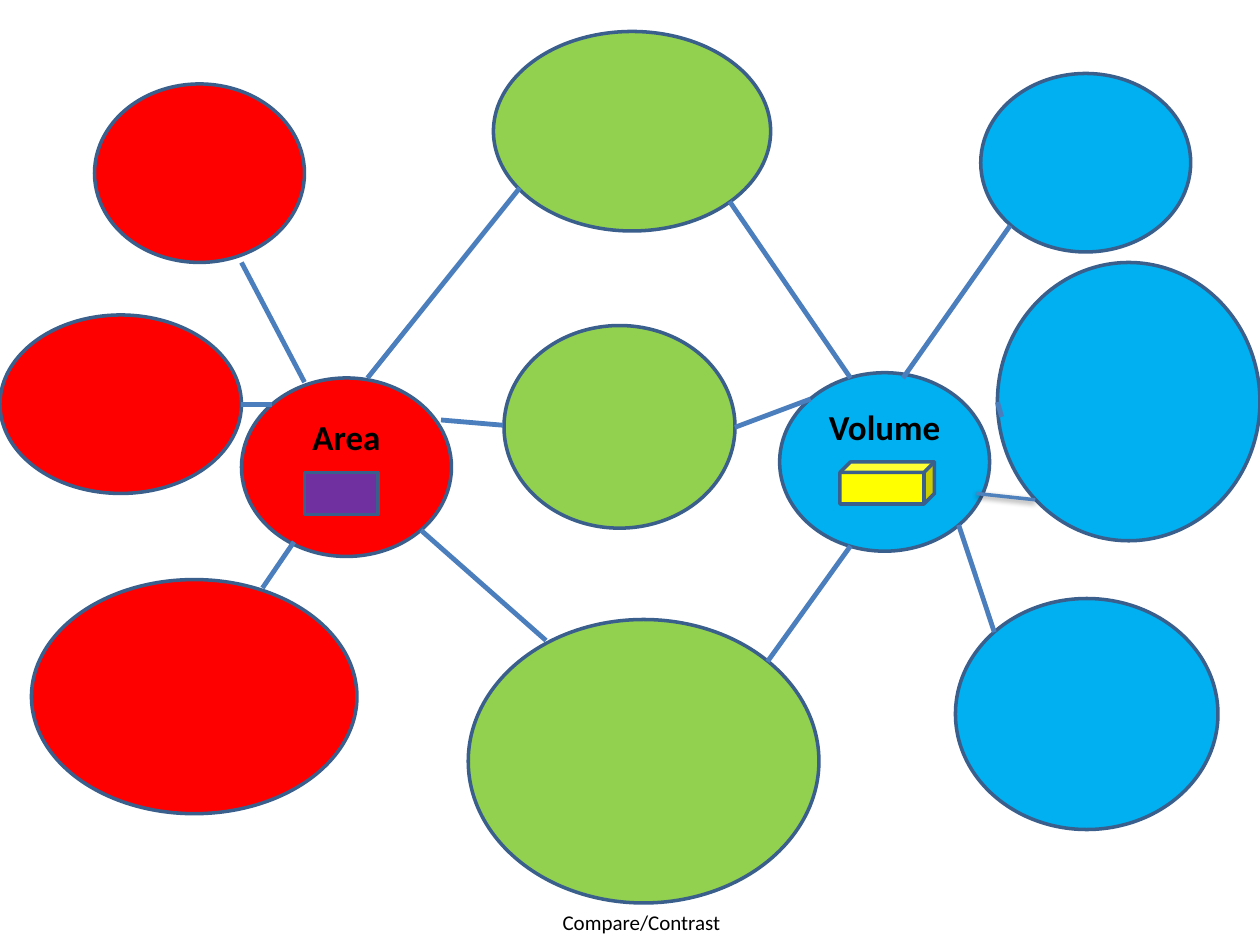
from lxml.etree import SubElement
from pptx import Presentation
from pptx.dml.color import RGBColor
from pptx.enum.shapes import MSO_CONNECTOR as CONN, MSO_SHAPE as SHAPE
from pptx.enum.text import MSO_ANCHOR as ANCHOR, PP_ALIGN as ALIGN
from pptx.oxml.ns import qn
from pptx.util import Inches, Pt

CELL = Inches(1) / 12  # grid of 120 columns by 90 rows
RED, BLUE, GREEN = "FF0000", "00B0F0", "92D050"
PURPLE, YELLOW, BLACK = "7030A0", "FFFF00", "000000"
OUTLINE, LINK, SOFT_LINK = "3A5F8C", "4B7EBC", "4F81BD"


def rgb(value):
    return RGBColor.from_string(value)


def grid(*cells):
    return [round(c * CELL) for c in cells]


def within(box, part):
    """Move a part from its region's corner to the slide grid."""
    return box[0] + part[0], box[1] + part[1], part[2], part[3]


def add_outlined(slide, kind, place, fill):
    sp = slide.shapes.add_shape(kind, *grid(*place))
    sp.shadow.inherit = False
    sp.fill.solid()
    sp.fill.fore_color.rgb = rgb(fill)
    sp.line.color.rgb = rgb(OUTLINE)
    sp.line.width = Pt(2)


def add_label(slide, place, text, size, bold=False):
    tf = slide.shapes.add_textbox(*grid(*place)).text_frame
    tf.word_wrap = True
    tf.vertical_anchor = ANCHOR.TOP
    p = tf.paragraphs[0]
    p.alignment = ALIGN.CENTER
    r = p.add_run()
    r.text = text
    for name, value in {"name": "Calibri", "size": Pt(size), "bold": bold}.items():
        setattr(r.font, name, value)
    r.font.color.rgb = rgb(BLACK)


def add_link(slide, ends, color=LINK, width=2.75, shadow=False):
    line = slide.shapes.add_connector(CONN.STRAIGHT, *grid(*ends))
    line.line.color.rgb = rgb(color)
    line.line.width = Pt(width)
    effects = SubElement(line._element.spPr, qn("a:effectLst"))
    if shadow:
        outer = SubElement(effects, qn("a:outerShdw"), blurRad="40000",
                           dist="20000", dir="5400000", rotWithShape="0")
        tone = SubElement(outer, qn("a:srgbClr"), val=BLACK)
        SubElement(tone, qn("a:alpha"), val="38000")


def add_bubbles(slide, box, color, bubbles):
    for bubble in bubbles:
        add_outlined(slide, SHAPE.OVAL, within(box, bubble), color)


def add_topic(slide, box, color, bubbles, title, label, icon):
    """A topic's bubbles, with its title and icon in the hub."""
    add_bubbles(slide, box, color, bubbles)
    add_label(slide, within(box, label), title, 20, bold=True)
    kind, place, fill = icon
    add_outlined(slide, kind, within(box, place), fill)


def add_links(slide):
    links = [
        # Area to its own bubbles
        (29, 36.4, 23, 25), (25.9, 38.5, 23, 38.5), (28, 51.6, 25, 56),
        # Area to the shared bubbles
        (35, 36, 49.5, 17.9), (42, 40, 47.9, 40.5), (40.1, 50.5, 52, 61),
        # Volume to the shared bubbles
        (81, 36, 69.5, 19.2), (77.2, 38, 70, 40.7), (81, 52, 73.1, 63),
        # Volume to its own bubbles
        (86, 36, 96.2, 21.5), (95.4, 39.7, 95, 38.3), (91.3, 50, 94.7, 60.2),
    ]
    for ends in links:
        add_link(slide, ends)
    add_link(slide, (93, 47, 98.6, 47.6), SOFT_LINK, 2, shadow=True)


def main():
    prs = Presentation()
    prs.slide_width, prs.slide_height = grid(120, 90)
    slide = prs.slides.add_slide(prs.slide_layouts[6])

    # Left: area, hub first
    add_topic(slide, (0, 8, 43, 70), RED,
              [(23, 28, 20, 17), (9, 0, 20, 17), (0, 22, 23, 17),
               (3, 47.2, 31, 22.3)],
              "Area", (27, 31, 12, 5.25),
              (SHAPE.RECTANGLE, (29, 37, 7, 4), PURPLE))
    # Right: volume, hub first
    add_topic(slide, (74, 7, 46, 72), BLUE,
              [(0.25, 28.5, 20, 17), (19.4, 0, 20, 17), (21, 18, 25, 26.5),
               (17, 50, 25, 22)],
              "Volume", (1.75, 31, 17, 5.25),
              (SHAPE.CUBE, (6, 37, 9, 4), YELLOW))
    # Centre: shared bubbles
    add_bubbles(slide, (44, 3, 34, 83), GREEN,
                [(3, 0, 26.4, 19), (4, 28, 22, 19.3), (0.6, 56, 33.4, 27)])
    add_links(slide)
    # Caption
    add_label(slide, (46, 86, 30.2, 3.6), "Compare/Contrast", 12)

    prs.save("out.pptx")


if __name__ == "__main__":
    main()
